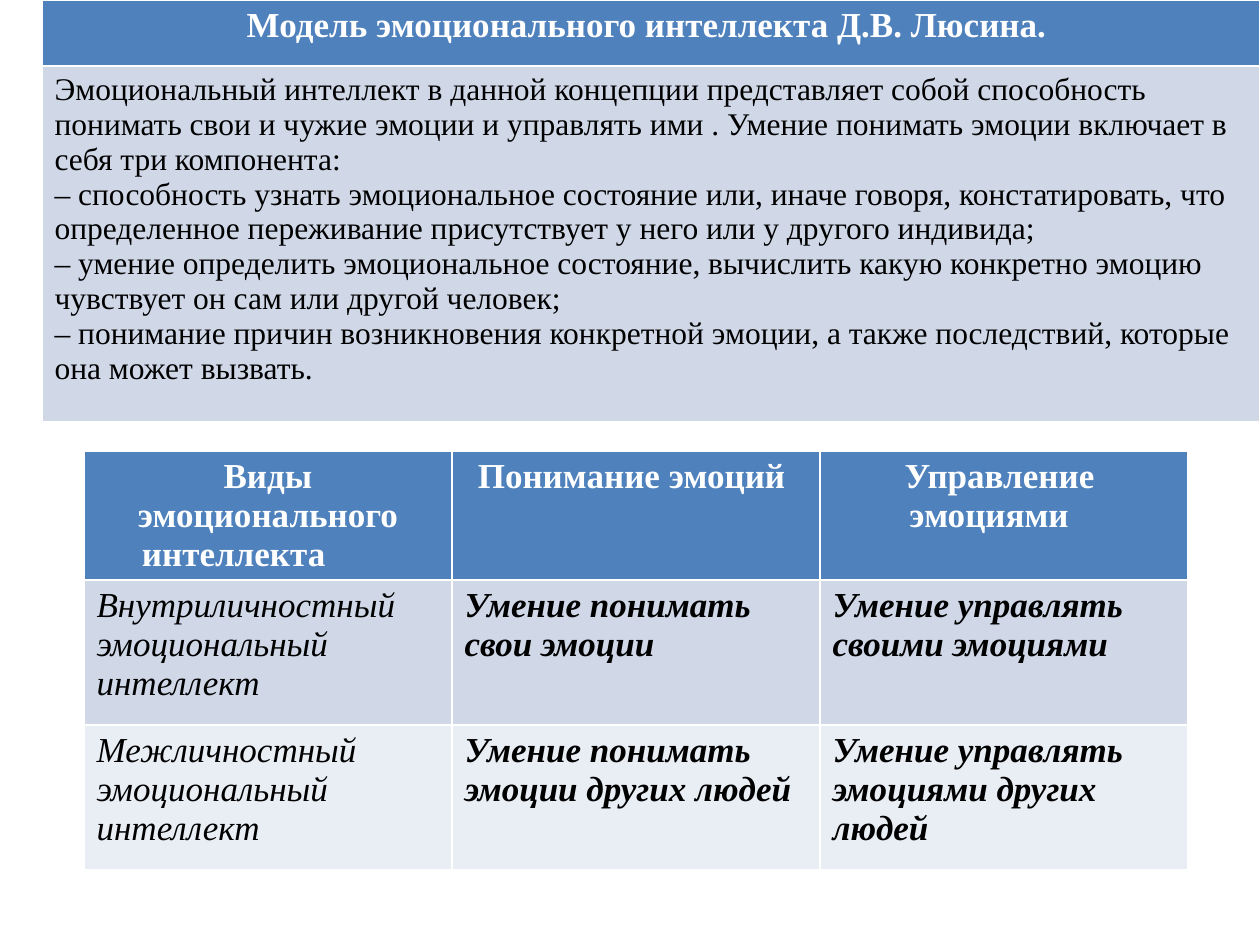
from dataclasses import dataclass

import pptx
import pptx.dml.color
import pptx.enum.text
import pptx.slide
import pptx.table
import pptx.util

EMU_PER_PX = 914400 / 126
FONT_NAME = "Times New Roman"
WHITE = pptx.dml.color.RGBColor(0xFF, 0xFF, 0xFF)
BLACK = pptx.dml.color.RGBColor(0x00, 0x00, 0x00)
HEADER_BLUE = pptx.dml.color.RGBColor(0x4F, 0x81, 0xBD)
BAND_BLUE = pptx.dml.color.RGBColor(0xD0, 0xD8, 0xE8)
BAND_PALE = pptx.dml.color.RGBColor(0xE9, 0xED, 0xF4)


@dataclass(frozen=True)
class CellStyle:
    fill: pptx.dml.color.RGBColor
    color: pptx.dml.color.RGBColor = BLACK
    size: int = 20
    bold: bool = False
    italic: bool = False
    centered: bool = False


@dataclass(frozen=True)
class CellContent:
    style: CellStyle
    paragraphs: tuple[str, ...]


@dataclass(frozen=True)
class TableRow:
    height: int
    cells: tuple[CellContent, ...]


@dataclass(frozen=True)
class TableBlock:
    left: int
    top: int
    column_width: int
    rows: tuple[TableRow, ...]


HEADER = CellStyle(HEADER_BLUE, WHITE, bold=True, centered=True)
DEFINITION = CellStyle(BAND_BLUE, size=18)


def skill_row(
    fill: pptx.dml.color.RGBColor, kind: tuple[str, ...], *skills: str
) -> TableRow:
    kind_style = CellStyle(fill, italic=True)
    skill_style = CellStyle(fill, bold=True, italic=True)
    skill_cells = tuple(CellContent(skill_style, (skill,)) for skill in skills)
    return TableRow(145, (CellContent(kind_style, kind), *skill_cells))


MODEL = TableBlock(42, 0, 1218, (
    TableRow(66, (
        CellContent(HEADER, ("Модель эмоционального интеллекта Д.В. Люсина. ",)),
    )),
    TableRow(356, (
        CellContent(DEFINITION, (
            "Эмоциональный интеллект в данной концепции представляет собой "
            "способность понимать свои и чужие эмоции и управлять ими . "
            "Умение понимать эмоции включает в себя три компонента:",
            "– способность узнать эмоциональное состояние или, иначе говоря, "
            "констатировать, что определенное переживание присутствует у него "
            "или у другого индивида;",
            "– умение определить эмоциональное состояние, вычислить какую "
            "конкретно эмоцию чувствует он сам или другой человек;",
            "– понимание причин возникновения конкретной эмоции, а также "
            "последствий, которые она может вызвать.",
        )),
    )),
))

KINDS = TableBlock(84, 451, 368, (
    TableRow(126, (
        CellContent(HEADER, ("Виды эмоционального интеллекта \t",)),
        CellContent(HEADER, ("Понимание эмоций ",)),
        CellContent(HEADER, ("Управление ", "эмоциями \t")),
    )),
    skill_row(
        BAND_BLUE,
        ("Внутриличностный эмоциональный", "интеллект \t"),
        "Умение понимать свои эмоции",
        "Умение управлять своими эмоциями",
    ),
    skill_row(
        BAND_PALE,
        ("Межличностный", "эмоциональный", "интеллект \t"),
        "Умение понимать эмоции других людей",
        "Умение управлять эмоциями других людей",
    ),
))


def px(length: int) -> pptx.util.Emu:
    return pptx.util.Emu(round(length * EMU_PER_PX))


def fill_cell(cell: pptx.table._Cell, content: CellContent) -> None:
    style = content.style
    cell.fill.solid()
    cell.fill.fore_color.rgb = style.fill
    text_frame = cell.text_frame
    for index, text in enumerate(content.paragraphs):
        paragraph = text_frame.add_paragraph() if index else text_frame.paragraphs[0]
        if style.centered:
            paragraph.alignment = pptx.enum.text.PP_ALIGN.CENTER
        run = paragraph.add_run()
        run.text = text
        run.font.name = FONT_NAME
        run.font.size = pptx.util.Pt(style.size)
        run.font.bold = style.bold
        run.font.italic = style.italic
        run.font.color.rgb = style.color


def draw_table(slide: pptx.slide.Slide, block: TableBlock) -> None:
    column_count = len(block.rows[0].cells)
    table = slide.shapes.add_table(
        len(block.rows),
        column_count,
        px(block.left),
        px(block.top),
        px(block.column_width * column_count),
        px(sum(row.height for row in block.rows)),
    ).table
    for column in table.columns:
        column.width = px(block.column_width)
    for table_row, row in zip(table.rows, block.rows):
        table_row.height = px(row.height)
        for cell, content in zip(table_row.cells, row.cells):
            fill_cell(cell, content)


def main() -> None:
    presentation = pptx.Presentation()
    presentation.slide_width = px(1260)
    presentation.slide_height = px(945)
    slide = presentation.slides.add_slide(presentation.slide_layouts[6])
    for block in (MODEL, KINDS):
        draw_table(slide, block)
    presentation.save("out.pptx")


if __name__ == "__main__":
    main()
